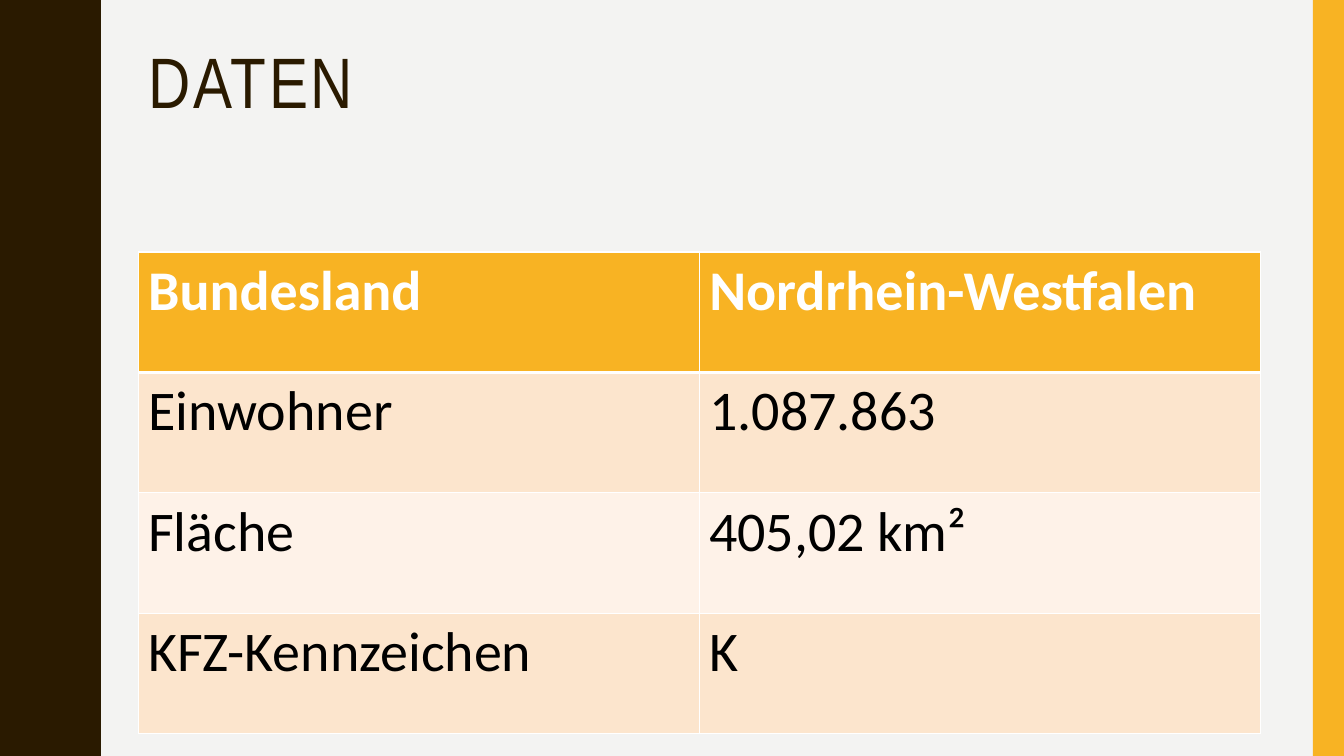
from lxml import etree
from pptx import Presentation
from pptx.dml.color import RGBColor
from pptx.enum.shapes import MSO_SHAPE as Preset
from pptx.enum.text import MSO_ANCHOR as Anchor
from pptx.oxml.ns import qn
from pptx.util import Inches, Pt

BROWN, GOLD, WHITE = "2A1A00", "F8B323", "FFFFFF"


def paint(fill, color):
    fill.solid()
    fill.fore_color.rgb = RGBColor.from_string(color)


def add_border(cell, side, points):
    line = etree.SubElement(cell._tc.get_or_add_tcPr(), qn(f"a:ln{side}"), w=str(Pt(points)))
    solid = etree.SubElement(line, qn("a:solidFill"))
    etree.SubElement(solid, qn("a:srgbClr"), val=WHITE)


presentation = Presentation()
presentation.slide_width = Inches(13.33)
presentation.slide_height = Inches(7.5)
slide = presentation.slides.add_slide(presentation.slide_layouts[6])
paint(slide.background.fill, "F3F3F2")

crest = [
    (0.78, 0), (0.78, 0.07), (0.79, 0.14), (0.8, 0.2), (0.81, 0.25), (0.83, 0.29),
    (0.85, 0.33), (0.87, 0.38), (0.89, 0.42), (0.91, 0.46), (0.93, 0.5),
    (0.95, 0.55), (0.96, 0.61), (0.97, 0.68), (0.97, 0.75),
]
period = 1.5
wave = crest + [(x, period - y) for x, y in reversed(crest[:-1])]
edge = [(x, y + period * index) for index in range(5) for x, y in wave]
builder = slide.shapes.build_freeform(0, 0, scale=Inches(1))
builder.add_line_segments(edge + [(0, 7.5)], close=True)
wavy_band = builder.convert_to_shape()
gold_bar = slide.shapes.add_shape(
    Preset.RECTANGLE, Inches(13.02), Inches(0), Inches(0.31), Inches(7.5)
)
for shape, color in ((wavy_band, BROWN), (gold_bar, GOLD)):
    shape.shadow.inherit = False
    paint(shape.fill, color)
    shape.line.fill.background()

title = slide.shapes.add_textbox(Inches(1.37), Inches(0.42), Inches(11.13), Inches(1.63))
title.text_frame.word_wrap = True
title.text_frame.vertical_anchor = Anchor.TOP
paragraph = title.text_frame.paragraphs[0]
paragraph.line_spacing = 0.9
run = paragraph.add_run()
run.text = "DATEN"
run.font.name = "Arial Narrow"
run.font.size = Pt(51)
paint(run.font.fill, BROWN)
run.font._element.set("spc", "200")

facts = [
    ("Bundesland", "Nordrhein-Westfalen"),
    ("Einwohner", "1.087.863"),
    ("Fläche", "405,02 km²"),
    ("KFZ-Kennzeichen", "K"),
]
row_fills = [GOLD, "FCE5CD", "FEF2E8", "FCE5CD"]
row_height = 1.195
table = slide.shapes.add_table(
    len(facts), 2, Inches(1.37), Inches(2.5), Inches(11.13), Inches(row_height * len(facts))
).table
for row_index, (fact, row_fill) in enumerate(zip(facts, row_fills)):
    is_header = row_index == 0
    for column_index, text in enumerate(fact):
        cell = table.cell(row_index, column_index)
        for side in "LRTB":
            heavy = (is_header and side == "B") or (row_index == 1 and side == "T")
            add_border(cell, side, 3 if heavy else 1)
        paint(cell.fill, row_fill)
        cell.text = text
        font = cell.text_frame.paragraphs[0].font
        font.name = "Calibri"
        font.size = Pt(40)
        font.bold = is_header
        paint(font.fill, WHITE if is_header else "000000")

presentation.save("out.pptx")
